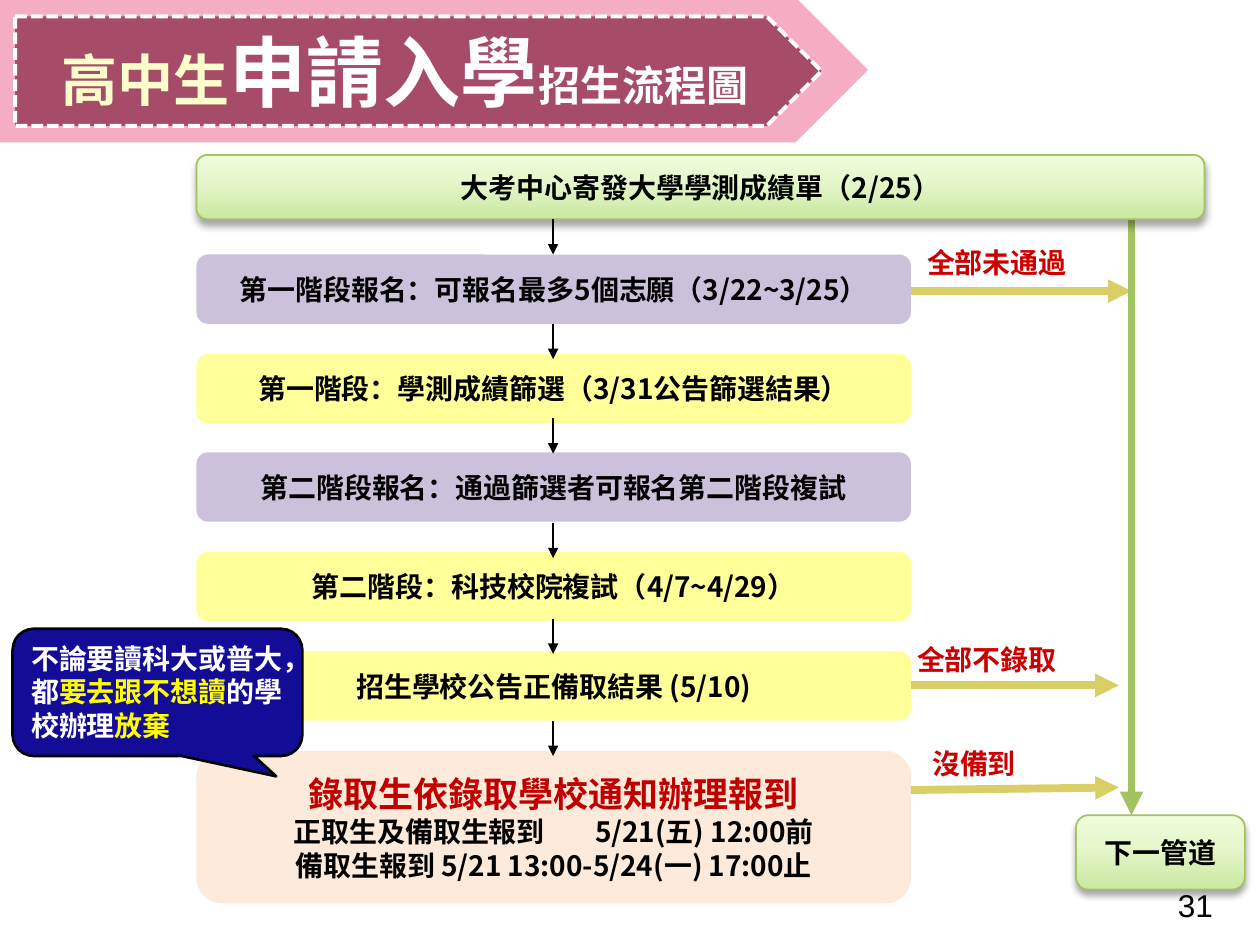
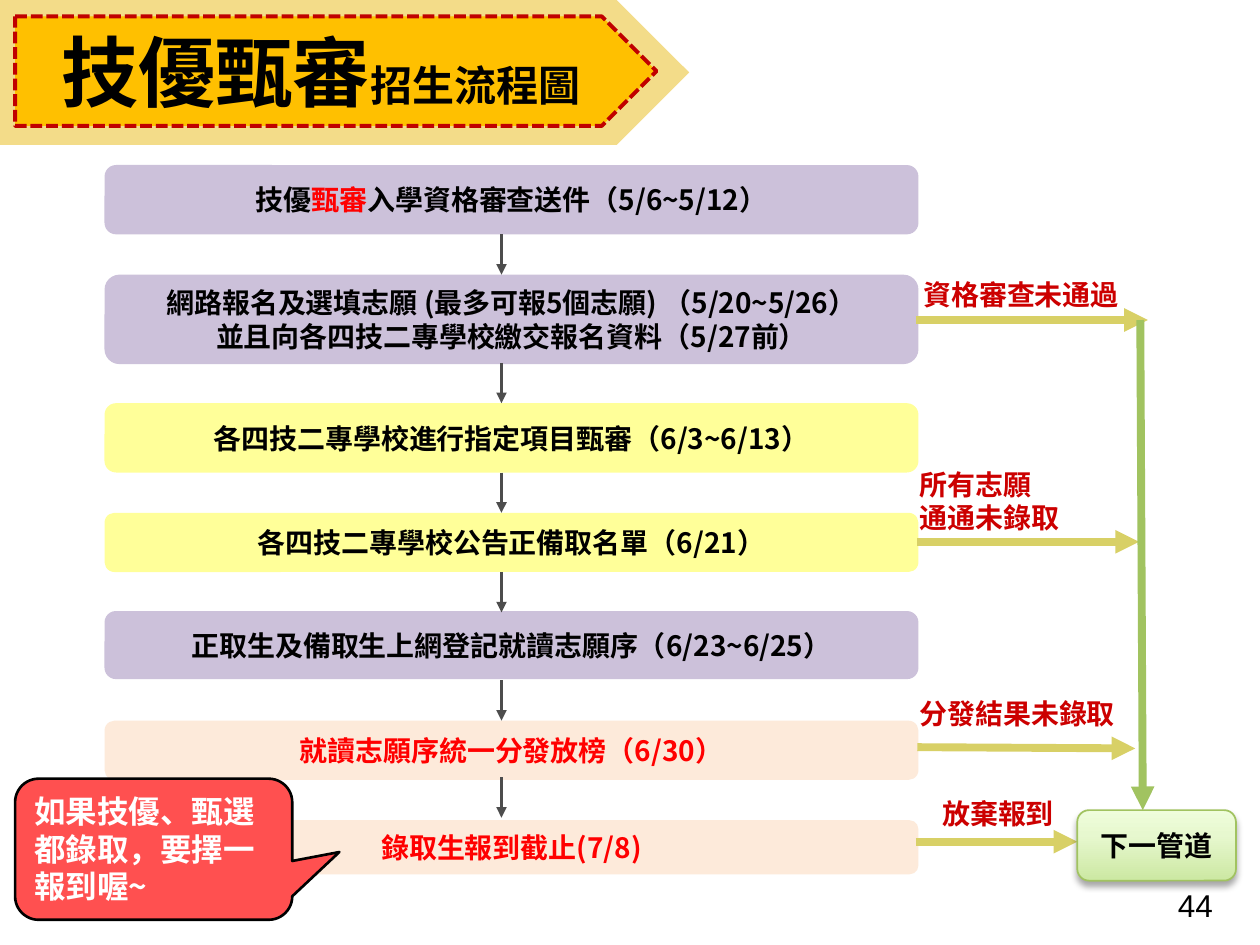
"""Build two admission flow chart slides that share one banner, box and arrow style."""
import dataclasses
from typing import NamedTuple

import lxml.etree
import pptx
import pptx.dml.color
import pptx.enum.dml
import pptx.enum.shapes
import pptx.enum.text
import pptx.oxml.ns
import pptx.slide
import pptx.util

RGB = pptx.dml.color.RGBColor
SHAPE = pptx.enum.shapes.MSO_SHAPE
ALIGN = pptx.enum.text.PP_ALIGN
ANCHOR = pptx.enum.text.MSO_ANCHOR
qn = pptx.oxml.ns.qn

EMU_PER_PX = 9144
SANS, MONO, ARIAL = "Noto Sans CJK SC", "Noto Sans Mono", "Arial"

BLACK = RGB(0x00, 0x00, 0x00)
WHITE = RGB(0xFF, 0xFF, 0xFF)
GRAY = RGB(0x4D, 0x4D, 0x4D)
RED = RGB(0xFF, 0x00, 0x00)
DARK_RED = RGB(0xC0, 0x00, 0x00)
LABEL_RED = RGB(0xCC, 0x00, 0x00)
BRIGHT_YELLOW = RGB(0xFF, 0xFF, 0x00)
CREAM = RGB(0xFF, 0xFF, 0xCC)
PURPLE = RGB(0xCC, 0xC1, 0xDA)
YELLOW = RGB(0xFF, 0xFF, 0x99)
PEACH = RGB(0xFD, 0xEA, 0xDA)
OLIVE = RGB(0xD8, 0xD0, 0x66)
GREEN = RGB(0xA1, 0xC3, 0x60)
PINK = RGB(0xF5, 0xAD, 0xC2)
PLUM = RGB(0xA6, 0x4C, 0x68)
SAND = RGB(0xF3, 0xDC, 0x89)
AMBER = RGB(0xFF, 0xC0, 0x00)
NAVY = RGB(0x13, 0x0C, 0x96)
CORAL = RGB(0xFF, 0x50, 0x50)
GREEN_STOPS = ((0, "CCE8A2"), (65000, "E7F8CF"), (100000, "EFFDDB"))


class Box(NamedTuple):
    left: int
    top: int
    width: int
    height: int


class Run(NamedTuple):
    text: str
    color: RGB | None = None
    size: int | None = None
    spacing: int = 0


Paragraphs = list[list[Run]]


class Step(NamedTuple):
    top: int
    height: int
    fill: RGB
    text: Paragraphs


class Exit(NamedTuple):
    label: Paragraphs
    label_box: Box
    start: tuple[int, int]
    end: tuple[int, int]


class Callout(NamedTuple):
    box: Box
    tip: tuple[float, float]
    fill: RGB
    size: int
    text: Paragraphs


@dataclasses.dataclass
class Flow:
    number: str
    title: list[Run]
    outer: Box
    outer_fill: RGB
    inner_width: int
    inner_fill: RGB
    dash: RGB
    left: int
    width: int
    steps: list[Step]
    arrow_x: int
    arrow_tops: tuple[int, ...]
    arrow_length: int
    arrow_color: RGB
    arrow_weight: int
    exits: list[Exit]
    trunk: tuple[tuple[int, int], tuple[int, int]]
    green_boxes: list[tuple[Box, str]]
    callout: Callout


def px(n: int) -> pptx.util.Emu:
    return pptx.util.Emu(n * EMU_PER_PX)


def line(text: str, color: RGB | None = None, size: int | None = None) -> Paragraphs:
    return [[Run(text, color, size)]]


def write(tf, text: Paragraphs, *, font: str = SANS, size: int = 16, color: RGB = BLACK,
          bold: bool = True, align=ALIGN.LEFT, anchor=ANCHOR.TOP, wrap: bool = True) -> None:
    tf.word_wrap = wrap
    tf.vertical_anchor = anchor
    for i, runs in enumerate(text):
        p = tf.paragraphs[0] if i == 0 else tf.add_paragraph()
        p.alignment = align
        for run in runs:
            r = p.add_run()
            r.text = run.text
            r.font.name = font
            r.font.size = pptx.util.Pt(run.size or size)
            r.font.bold = bold
            r.font.color.rgb = run.color or color
            rPr = r._r.get_or_add_rPr()
            lxml.etree.SubElement(rPr, qn("a:ea"), typeface=font)
            if run.spacing:
                rPr.set("spc", str(run.spacing * 100))


def add_box(s: pptx.slide.Slide, kind, box: Box, fill: RGB,
            outline: RGB | None = None, weight: float = 1):
    sp = s.shapes.add_shape(kind, *map(px, box))
    sp.shadow.inherit = False
    sp.fill.solid()
    sp.fill.fore_color.rgb = fill
    if outline is None:
        sp.line.fill.background()
    else:
        sp.line.color.rgb = outline
        sp.line.width = pptx.util.Pt(weight)
    return sp


def add_step(s: pptx.slide.Slide, box: Box, fill: RGB, text: Paragraphs,
             outline: RGB | None = None):
    sp = add_box(s, SHAPE.ROUNDED_RECTANGLE, box, fill, outline)
    write(sp.text_frame, text, align=ALIGN.CENTER, anchor=ANCHOR.MIDDLE, wrap=False)
    return sp


def add_color(parent, value: str):
    return lxml.etree.SubElement(parent, qn("a:srgbClr"), val=value)


def add_green_box(s: pptx.slide.Slide, box: Box, text: str) -> None:
    sp = add_step(s, box, WHITE, line(text), GREEN)
    sp.fill.gradient()
    sp.fill.gradient_angle = 90
    stops = sp.element.spPr.find(".//" + qn("a:gsLst"))
    for stop in list(stops):
        stops.remove(stop)
    for pos, value in GREEN_STOPS:
        add_color(lxml.etree.SubElement(stops, qn("a:gs"), pos=str(pos)), value)
    effects = sp.element.spPr.find(qn("a:effectLst"))
    shadow = lxml.etree.SubElement(
        effects, qn("a:outerShdw"), blurRad=str(pptx.util.Pt(4)),
        dist=str(pptx.util.Pt(3)), dir="5400000", rotWithShape="0")
    lxml.etree.SubElement(add_color(shadow, "000000"), qn("a:alpha"), val="35000")


def add_arrow(s: pptx.slide.Slide, start: tuple[int, int], end: tuple[int, int],
              color: RGB, weight: float = 4.5) -> None:
    kind = pptx.enum.shapes.MSO_CONNECTOR.STRAIGHT
    cn = s.shapes.add_connector(kind, *map(px, (*start, *end)))
    cn.line.color.rgb = color
    cn.line.width = pptx.util.Pt(weight)
    spPr = cn.element.spPr
    lxml.etree.SubElement(spPr.find(qn("a:ln")), qn("a:tailEnd"), type="triangle")
    lxml.etree.SubElement(spPr, qn("a:effectLst"))


def add_label(s: pptx.slide.Slide, box: Box, text: Paragraphs, **style) -> None:
    write(s.shapes.add_textbox(*map(px, box)).text_frame, text, **style)


def add_banner(s: pptx.slide.Slide, flow: Flow) -> None:
    add_box(s, SHAPE.PENTAGON, flow.outer, flow.outer_fill)
    sp = add_box(s, SHAPE.PENTAGON, Box(12, 13, flow.inner_width, 87),
                 flow.inner_fill, flow.dash, 2.25)
    sp.line.dash_style = pptx.enum.dml.MSO_LINE.SQUARE_DOT
    sp.text_frame.margin_left = px(37)
    write(sp.text_frame, [flow.title], font=MONO, size=44, anchor=ANCHOR.MIDDLE)


def add_callout(s: pptx.slide.Slide, callout: Callout) -> None:
    sp = add_box(s, SHAPE.ROUNDED_RECTANGULAR_CALLOUT, callout.box, callout.fill, BLACK, 1.5)
    sp.adjustments[0], sp.adjustments[1] = callout.tip
    write(sp.text_frame, callout.text, size=callout.size, color=WHITE)


def add_flow(prs, flow: Flow) -> None:
    s = prs.slides.add_slide(prs.slide_layouts[6])
    add_label(s, Box(925, 698, 63, 40), line(flow.number), font=ARIAL, size=18, bold=False)
    for step in flow.steps:
        add_step(s, Box(flow.left, step.top, flow.width, step.height), step.fill, step.text)
    for way_out in flow.exits:
        add_arrow(s, way_out.start, way_out.end, OLIVE)
        add_label(s, way_out.label_box, way_out.label, font=MONO, color=LABEL_RED)
    add_arrow(s, *flow.trunk, GREEN)
    for box, text in flow.green_boxes:
        add_green_box(s, box, text)
    for top in flow.arrow_tops:
        add_arrow(s, (flow.arrow_x, top), (flow.arrow_x, top + flow.arrow_length),
                  flow.arrow_color, flow.arrow_weight)
    add_banner(s, flow)
    add_callout(s, flow.callout)


APPLICATION = Flow(
    number="31",
    title=[Run("高中生", CREAM, 32), Run("申請入學", WHITE), Run("招生流程圖", WHITE, 24)],
    outer=Box(-4, -2, 693, 115), outer_fill=PINK,
    inner_width=640, inner_fill=PLUM, dash=WHITE,
    left=156, width=567,
    steps=[
        Step(202, 55, PURPLE, line("第一階段報名：可報名最多5個志願（3/22~3/25）")),
        Step(281, 55, YELLOW, line("第一階段：學測成績篩選（3/31公告篩選結果）")),
        Step(359, 55, PURPLE, line("第二階段報名：通過篩選者可報名第二階段複試")),
        Step(438, 55, YELLOW, line("第二階段：科技校院複試（4/7~4/29）")),
        Step(517, 55, YELLOW, line("招生學校公告正備取結果 (5/10)")),
        Step(596, 121, PEACH, [
            [Run("錄取生依錄取學校通知辦理報到", DARK_RED, 20)],
            [Run("正取生及備取生報到"), Run(" ", spacing=25), Run("5/21(五) 12:00前")],
            [Run("備取生報到 5/21 13:00-5/24(一) 17:00止")]]),
    ],
    arrow_x=439, arrow_tops=(174, 257, 332, 415, 491, 572), arrow_length=28,
    arrow_color=BLACK, arrow_weight=1,
    exits=[
        Exit(line("全部未通過"), Box(726, 190, 143, 37), (723, 231), (898, 231)),
        Exit(line("全部不錄取"), Box(718, 505, 173, 37), (723, 544), (888, 544)),
        Exit(line("沒備到"), Box(730, 588, 88, 37), (723, 627), (888, 625)),
    ],
    trunk=((898, 173), (898, 647)),
    green_boxes=[(Box(156, 123, 800, 51), "大考中心寄發大學學測成績單（2/25）"),
                 (Box(854, 647, 134, 59), "下一管道")],
    callout=Callout(Box(10, 499, 230, 101), (0.41, 0.66), NAVY, 16, [[
        Run("不論要讀科大或普大，都"), Run("要去跟不想讀", BRIGHT_YELLOW),
        Run("的學校辦理"), Run("放棄", BRIGHT_YELLOW)]]),
)

SKILLS = Flow(
    number="44",
    title=[Run("技優甄審"), Run("招生流程圖", size=24)],
    outer=Box(-4, 0, 551, 115), outer_fill=SAND,
    inner_width=509, inner_fill=AMBER, dash=DARK_RED,
    left=83, width=646,
    steps=[
        Step(131, 55, PURPLE, [[Run("技優"), Run("甄審", RED),
                                Run("入學資格審查送件（5/6~5/12）")]]),
        Step(218, 71, PURPLE, [[Run("網路報名及選填志願 (最多可報5個志願) （5/20~5/26）")],
                               [Run("並且向各四技二專學校繳交報名資料（5/27前）")]]),
        Step(320, 55, YELLOW, line("各四技二專學校進行指定項目甄審（6/3~6/13）")),
        Step(407, 47, YELLOW, line("各四技二專學校公告正備取名單（6/21）")),
        Step(485, 54, PURPLE, line("正取生及備取生上網登記就讀志願序（6/23~6/25）")),
        Step(572, 47, PEACH, line("就讀志願序統一分發放榜（6/30）", RED)),
        Step(651, 43, PEACH, line("錄取生報到截止(7/8)", RED)),
    ],
    arrow_x=398, arrow_tops=(186, 288, 375, 454, 540, 617), arrow_length=32,
    arrow_color=GRAY, arrow_weight=2,
    exits=[
        Exit(line("資格審查未通過"), Box(723, 215, 188, 37), (727, 254), (911, 254)),
        Exit(line("所有志願") + line("通通未錄取"), Box(720, 366, 249, 64),
             (728, 430), (904, 430)),
        Exit(line("分發結果未錄取"), Box(720, 548, 201, 37), (728, 593), (901, 594)),
        Exit(line("放棄報到"), Box(738, 627, 140, 37), (727, 668), (855, 668)),
    ],
    trunk=((905, 254), (907, 643)),
    green_boxes=[(Box(855, 643, 126, 56), "下一管道")],
    callout=Callout(Box(12, 618, 220, 112), (0.67, 0.02), CORAL, 18,
                    line("如果技優、甄選都錄取，要擇一報到喔~")),
)


def main() -> None:
    prs = pptx.Presentation()
    prs.slide_width, prs.slide_height = px(1000), px(750)
    for flow in (APPLICATION, SKILLS):
        add_flow(prs, flow)
    prs.save("out.pptx")


if __name__ == "__main__":
    main()
